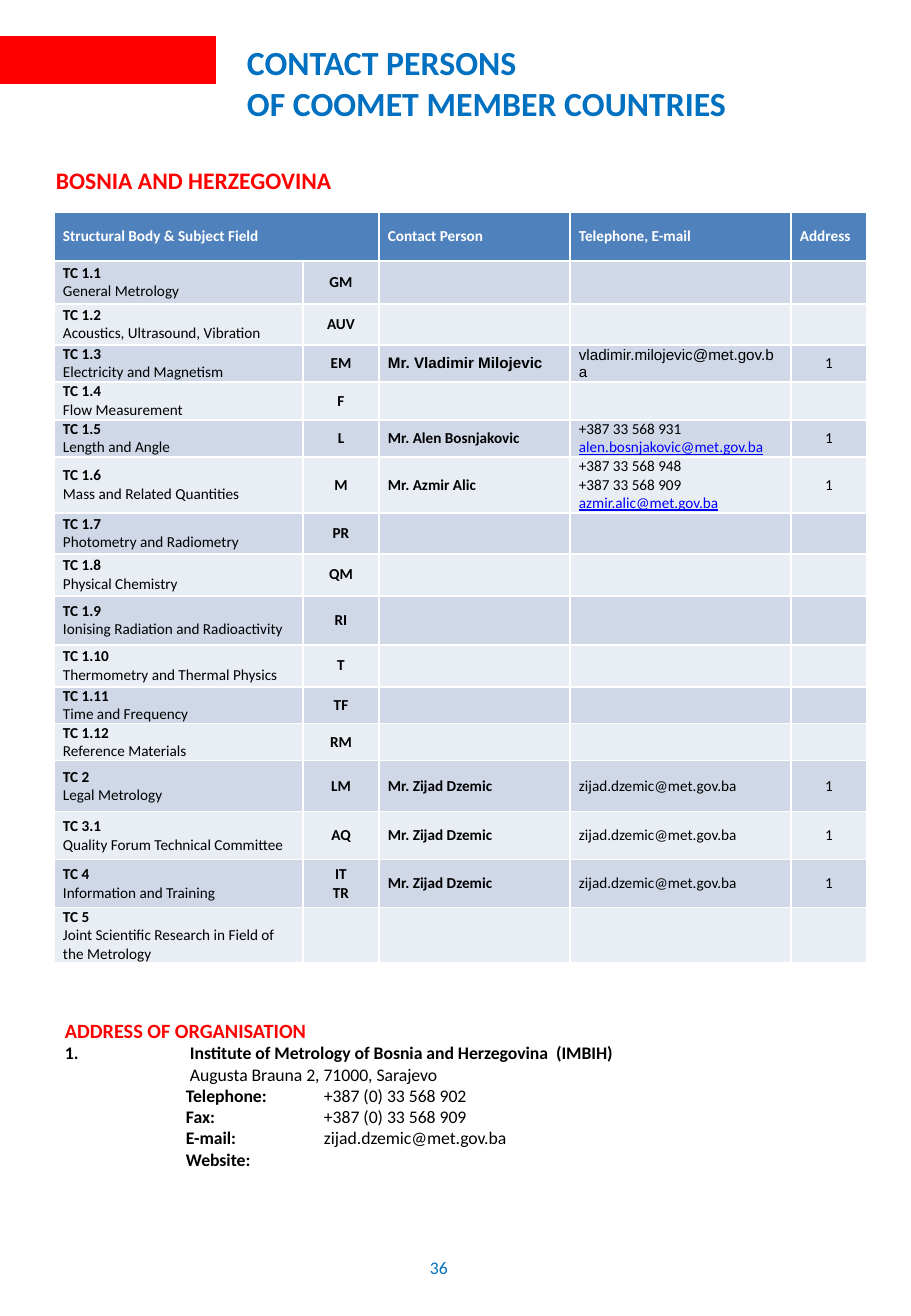
from typing import NamedTuple

from lxml.etree import SubElement
from pptx import Presentation
from pptx.dml.color import RGBColor
from pptx.enum.shapes import MSO_SHAPE as Shape
from pptx.enum.text import MSO_ANCHOR as Anchor, PP_ALIGN as Align
from pptx.oxml.ns import qn
from pptx.util import Pt

PX = 7526  # EMU per px

RED = RGBColor(0xFF, 0x00, 0x00)
BLUE = RGBColor(0x00, 0x70, 0xC0)
LINK_BLUE = RGBColor(0x00, 0x00, 0xFF)
HEADER_BLUE = RGBColor(0x4F, 0x81, 0xBD)
BANDS = RGBColor(0xD0, 0xD8, 0xE8), RGBColor(0xE9, 0xED, 0xF4)
BLACK = RGBColor(0x00, 0x00, 0x00)
WHITE = RGBColor(0xFF, 0xFF, 0xFF)


class Box(NamedTuple):
    left: int
    top: int
    width: int
    height: int

    def emu(self):
        return [length * PX for length in self]


class Field(NamedTuple):
    """One table row: a technical committee and its contact."""
    height: int
    code: str
    subject: str
    short: str = ""
    person: str = ""
    contact: tuple = ()
    font: str = "Calibri"


COLUMN_WIDTHS = [249, 76, 191, 221, 76]
HEADER_HEIGHT = 49
HEADINGS = ["Structural Body & Subject Field", "", "Contact Person",
            "Telephone, E-mail", "Address"]
HEAD_CONTACT = "Mr. Zijad Dzemic", ("zijad.dzemic@met.gov.ba",)
FIELDS = [
    Field(43, "TC 1.1", "General Metrology", "GM"),
    Field(41, "TC 1.2", "Acoustics, Ultrasound, Vibration", "AUV"),
    Field(37, "TC 1.3", "Electricity and Magnetism", "EM", "Mr. Vladimir Milojevic",
          ("vladimir.milojevic@met.gov.ba",), "Arial"),
    Field(38, "TC 1.4", "Flow Measurement", "F"),
    Field(37, "TC 1.5", "Length and Angle", "L", "Mr. Alen Bosnjakovic",
          ("+387 33 568 931", "alen.bosnjakovic@met.gov.ba")),
    Field(56, "TC 1.6", "Mass and Related Quantities", "M", "Mr. Azmir Alic",
          ("+387 33 568 948", "+387 33 568 909", "azmir.alic@met.gov.ba")),
    Field(41, "TC 1.7", "Photometry and Radiometry", "PR"),
    Field(42, "TC 1.8", "Physical Chemistry", "QM"),
    Field(49, "TC 1.9", "Ionising Radiation and Radioactivity", "RI"),
    Field(42, "TC 1.10", "Thermometry and Thermal Physics", "T"),
    Field(37, "TC 1.11", "Time and Frequency", "TF"),
    Field(37, "TC 1.12", "Reference Materials", "RM"),
    Field(51, "TC 2", "Legal Metrology", "LM", *HEAD_CONTACT),
    Field(48, "TC 3.1", "Quality Forum Technical Committee", "AQ", *HEAD_CONTACT),
    Field(48, "TC 4", "Information and Training", "IT\nTR", *HEAD_CONTACT),
    Field(55, "TC 5", "Joint Scientific Research in Field of the Metrology"),
]
ADDRESS_LINES = [
    ("Telephone:", "+387 (0) 33 568 902"),
    ("Fax:", "+387 (0) 33 568 909"),
    ("E-mail:", "zijad.dzemic@met.gov.ba"),
    ("Website:", ""),
]


def add_run(para, text, size, color=BLACK, bold=False, font="Calibri"):
    run = para.add_run()
    run.text = text
    run.font.size = Pt(size)
    run.font.name = font
    run.font.bold = bold
    run.font.color.rgb = color
    return run


def next_para(frame):
    """Return the first paragraph while it is unused, then new ones."""
    first = frame.paragraphs[0]
    return frame.add_paragraph() if first.runs else first


def add_text_frame(page, box, wrap=True):
    frame = page.shapes.add_textbox(*box.emu()).text_frame
    frame.word_wrap = wrap
    return frame


def set_tabs(para, *stops):
    tabs = SubElement(para._p.get_or_add_pPr(), qn("a:tabLst"))
    for stop in stops:
        SubElement(tabs, qn("a:tab"), pos=str(stop * PX), algn="l")


def add_banner(page, box):
    """Red bar at the left edge, with the title to its right."""
    bar_width = 216
    bar = page.shapes.add_shape(Shape.RECTANGLE, *box._replace(width=bar_width).emu())
    bar.shadow.inherit = False
    bar.fill.solid()
    bar.fill.fore_color.rgb = RED
    bar.line.fill.background()

    title_box = Box(box.left + bar_width, box.top, box.width - bar_width, box.height)
    frame = add_text_frame(page, title_box)
    frame.margin_left = 31 * PX
    para = frame.paragraphs[0]
    add_run(para, "CONTACT PERSONS", 20, BLUE, True)
    para.add_line_break()
    add_run(para, "OF COOMET MEMBER COUNTRIES", 20, BLUE, True)


def add_label(page, box, text, size, color, bold=False, wrap=True):
    frame = add_text_frame(page, box, wrap)
    add_run(frame.paragraphs[0], text, size, color, bold)


def style_cell(cell, fill):
    cell.fill.solid()
    cell.fill.fore_color.rgb = fill
    cell.vertical_anchor = Anchor.MIDDLE
    cell.margin_left = cell.margin_right = 9 * PX
    cell.margin_top = cell.margin_bottom = 0


def fill_field_row(cells, field):
    subject, short, person, contact, address = [cell.text_frame for cell in cells]
    add_run(next_para(subject), field.code, 9, bold=True)
    add_run(next_para(subject), field.subject, 9)
    for line in field.short.split():
        para = next_para(short)
        para.alignment = Align.CENTER
        add_run(para, line, 9, bold=True)
    if not field.person:
        return
    add_run(next_para(person), field.person, 9, bold=True, font=field.font)
    for line in field.contact:
        linked = "@" in line and len(field.contact) > 1
        run = add_run(next_para(contact), line, 9, LINK_BLUE if linked else BLACK,
                      font=field.font)
        run.font.underline = linked
    para = next_para(address)
    para.alignment = Align.CENTER
    add_run(para, "1", 9)


def add_contact_table(page, box):
    table = page.shapes.add_table(len(FIELDS) + 1, len(COLUMN_WIDTHS), *box.emu()).table
    for column, width in zip(table.columns, COLUMN_WIDTHS):
        column.width = width * PX
    header, *rows = table.rows
    header.height = HEADER_HEIGHT * PX
    for cell, heading in zip(header.cells, HEADINGS):
        style_cell(cell, HEADER_BLUE)
        if heading:
            add_run(cell.text_frame.paragraphs[0], heading, 9, WHITE, True)
    table.cell(0, 0).merge(table.cell(0, 1))
    for index, (row, field) in enumerate(zip(rows, FIELDS)):
        row.height = field.height * PX
        for cell in row.cells:
            style_cell(cell, BANDS[index % 2])
        fill_field_row(row.cells, field)


def add_address(page, box):
    frame = add_text_frame(page, box)
    add_run(next_para(frame), "ADDRESS OF ORGANISATION", 12, RED, True)
    for text, bold in [("1.\tInstitute of Metrology of Bosnia and Herzegovina  (IMBIH)", True),
                       ("\tAugusta Brauna 2, 71000, Sarajevo", False)]:
        para = next_para(frame)
        set_tabs(para, 125)
        add_run(para, text, 10.5, bold=bold)
    for label, value in ADDRESS_LINES:
        para = next_para(frame)
        set_tabs(para, 121, 259)
        add_run(para, "\t" + label, 10.5, bold=True)
        if value:
            add_run(para, "\t" + value, 10.5)


def main():
    deck = Presentation()
    deck.slide_width, deck.slide_height = 911 * PX, 1316 * PX
    page = deck.slides.add_slide(deck.slide_layouts[6])
    add_label(page, Box(418, 1251, 45, 34), "36", 10.5, BLUE, wrap=False)
    add_banner(page, Box(0, 36, 865, 48))
    add_label(page, Box(44, 160, 820, 48), "BOSNIA AND HERZEGOVINA", 14, RED, True)
    table_height = HEADER_HEIGHT + sum(field.height for field in FIELDS)
    add_contact_table(page, Box(54, 212, sum(COLUMN_WIDTHS), table_height))
    add_address(page, Box(53, 1012, 803, 165))
    deck.save("out.pptx")


if __name__ == "__main__":
    main()
